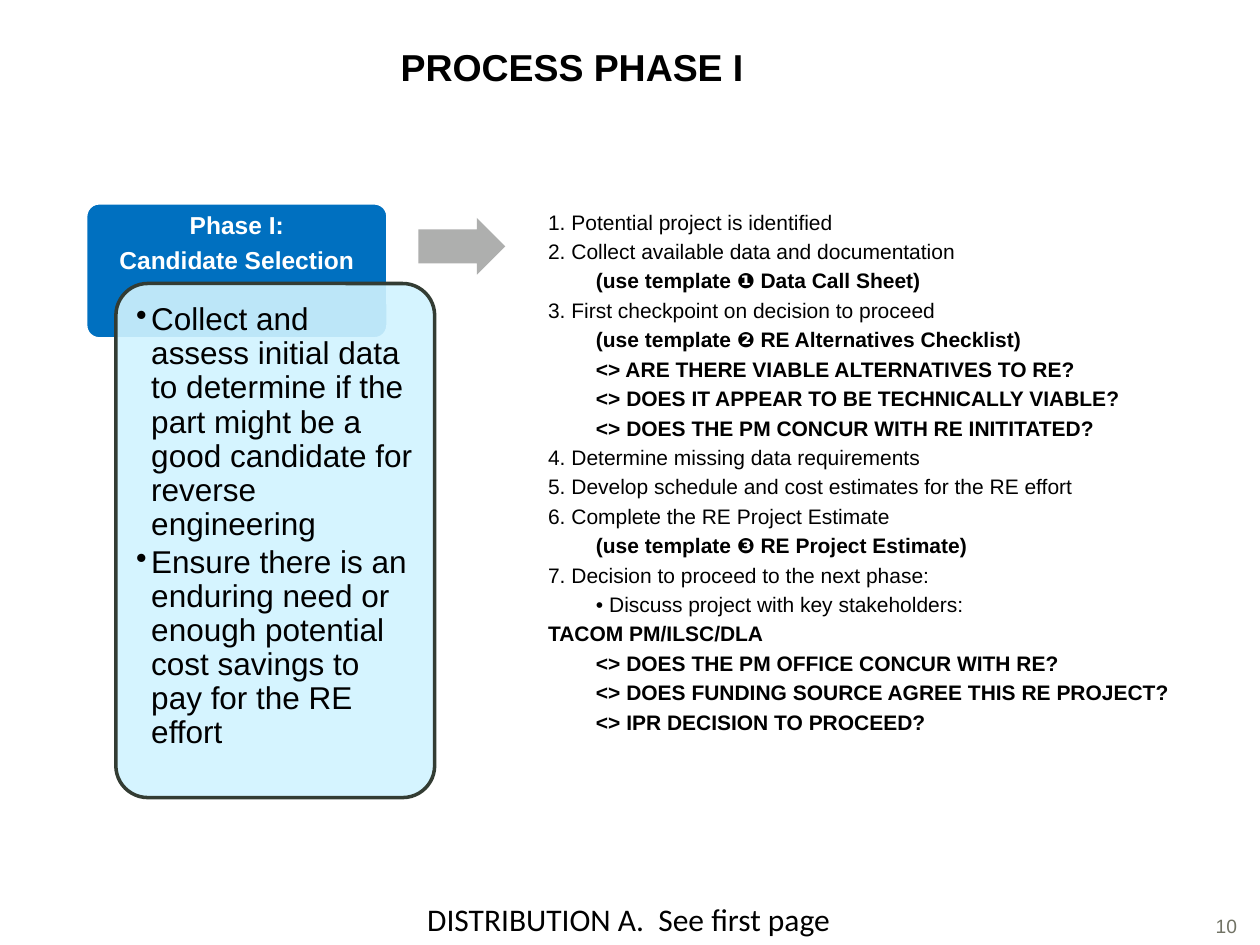
import pptx
import pptx.dml.color
import pptx.enum.shapes
import pptx.enum.text
import pptx.oxml
import pptx.oxml.ns
import pptx.util

Align = pptx.enum.text.PP_ALIGN
Anchor = pptx.enum.text.MSO_ANCHOR
Shape = pptx.enum.shapes.MSO_SHAPE
COLUMNS, ROWS = 100, 75
STEPS = [
    (0, False, "1. Potential project is identified"),
    (0, False, "2. Collect available data and documentation"),
    (1, True, "(use template ❶ Data Call Sheet)"),
    (0, False, "3. First checkpoint on decision to proceed"),
    (1, True, "(use template ❷ RE Alternatives Checklist)"),
    (1, True, "<> ARE THERE VIABLE ALTERNATIVES TO RE?"),
    (1, True, "<> DOES IT APPEAR TO BE TECHNICALLY VIABLE?"),
    (1, True, "<> DOES THE PM CONCUR WITH RE INITITATED?"),
    (0, False, "4. Determine missing data requirements"),
    (0, False, "5. Develop schedule and cost estimates for the RE effort"),
    (0, False, "6. Complete the RE Project Estimate"),
    (1, True, "(use template ❸ RE Project Estimate)"),
    (0, False, "7. Decision to proceed to the next phase:"),
    (1, False, "• Discuss project with key stakeholders:"),
    (0, True, "TACOM PM/ILSC/DLA"),
    (1, True, "<> DOES THE PM OFFICE CONCUR WITH RE?"),
    (1, True, "<> DOES FUNDING SOURCE AGREE THIS RE PROJECT?"),
    (1, True, "<> IPR DECISION TO PROCEED?"),
]
GOALS = [
    "Collect and assess initial data to determine if the part might be a good "
    "candidate for reverse engineering",
    "Ensure there is an enduring need or enough potential cost savings to pay "
    "for the RE effort",
]


def color(value):
    return pptx.dml.color.RGBColor.from_string(value)


class SlideBuilder:
    """Hold the text style and the current slide, and add elements on a grid."""

    def __init__(self, deck, font="Arial", ink="000000"):
        self.deck, self.font, self.ink = deck, font, ink
        self.page = deck.slides.add_slide(deck.slide_layouts[1])

    def area(self, left, top, width, height):
        column = self.deck.slide_width / COLUMNS
        row = self.deck.slide_height / ROWS
        return [round(count * unit) for count, unit in
                zip((left, top, width, height), (column, row, column, row))]

    def frame(self, box, insets=(0.1, 0.05, 0.1, 0.05), anchor=Anchor.TOP):
        frame = box.text_frame
        frame.word_wrap = True
        frame.auto_size = pptx.enum.text.MSO_AUTO_SIZE.NONE
        frame.vertical_anchor = anchor
        sides = ("margin_left", "margin_top", "margin_right", "margin_bottom")
        for side, inset in zip(sides, insets):
            setattr(frame, side, pptx.util.Inches(inset))
        return frame

    def paragraph(self, frame, text, size, bold=False, ink=None, font=None,
                  align=Align.LEFT, before=0, after=0, spacing=1,
                  margin=0, hanging=0, bullet=None):
        first = not frame.paragraphs[0].runs
        para = frame.paragraphs[0] if first else frame.add_paragraph()
        para.alignment, para.line_spacing = align, spacing
        para.space_before = pptx.util.Pt(0 if first else before)
        para.space_after = pptx.util.Pt(after)
        properties = para._p.get_or_add_pPr()
        properties.set("marL", str(pptx.util.Inches(margin)))
        properties.set("indent", str(-pptx.util.Inches(hanging)))
        tag = "a:buChar" if bullet else "a:buNone"
        mark = pptx.oxml.parse_xml(f"<{tag} {pptx.oxml.ns.nsdecls('a')}/>")
        if bullet:
            mark.set("char", bullet)
        properties.append(mark)
        span = para.add_run()
        span.text = text
        span.font.name = font or self.font
        span.font.size = pptx.util.Pt(size)
        span.font.bold = bold
        span.font.color.rgb = color(ink or self.ink)

    def placeholder(self, index, *place):
        box = self.page.placeholders[index]
        box.left, box.top, box.width, box.height = self.area(*place)
        return self.frame(box)

    def text_box(self, *place, **style):
        return self.frame(self.page.shapes.add_textbox(*self.area(*place)), **style)

    def shape(self, kind, *place, fill, adjustments, line=None, opacity=None):
        shape = self.page.shapes.add_shape(kind, *self.area(*place))
        shape.shadow.inherit = False
        for index, value in enumerate(adjustments):
            shape.adjustments[index] = value
        shape.fill.solid()
        shape.fill.fore_color.rgb = color(fill)
        if opacity:
            alpha = pptx.oxml.parse_xml(
                f"<a:alpha {pptx.oxml.ns.nsdecls('a')} val='{opacity * 1000}'/>")
            shape._element.spPr.find(".//" + pptx.oxml.ns.qn("a:srgbClr")).append(alpha)
        if line:
            shape.line.color.rgb = color(line)
            shape.line.width = pptx.util.Pt(2)
        else:
            shape.line.fill.background()


def main():
    deck = pptx.Presentation()
    deck.slide_width = pptx.util.Inches(10)
    deck.slide_height = pptx.util.Inches(7.5)
    slide = SlideBuilder(deck)

    number = slide.text_box(95.5, 72.1, 4.5, 2.9)
    slide.paragraph(number, "10", 11, ink="717365")
    footer = slide.text_box(6.9, 69.8, 86, 5.1, anchor=Anchor.BOTTOM)
    slide.paragraph(footer, "DISTRIBUTION A.  See first page", 18,
                    font="Calibri", align=Align.CENTER)

    title = slide.placeholder(0, 30.8, 3, 60.9, 8.8)
    slide.paragraph(title, "PROCESS PHASE I", 21.4, bold=True)
    steps = slide.placeholder(1, 42.5, 16.1, 51.6, 49.7)
    for level, bold, text in STEPS:
        slide.paragraph(steps, text, 12, bold=bold, before=2.4, margin=0.38,
                        hanging=0 if level else 0.38)

    slide.shape(Shape.ROUNDED_RECTANGLE, 6.8, 16.1, 24, 10.8,
                fill="0070C0", line="FFFFFF", adjustments=[0.1])
    phase = slide.text_box(6.8, 16.1, 24, 7.2, insets=(0.08, 0.08, 0.08, 0.04))
    for text in ("Phase I:", "Candidate Selection"):
        slide.paragraph(phase, text, 14, bold=True, ink="FFFFFF",
                        align=Align.CENTER, spacing=0.9, after=4.9)

    slide.shape(Shape.ROUNDED_RECTANGLE, 9.2, 22.5, 25.3, 40.8, fill="D1F3FF",
                line="333C33", adjustments=[0.1], opacity=90)
    goals = slide.text_box(9.9, 23.2, 23.8, 39.5, insets=(0.09,) * 4)
    for text in GOALS:
        slide.paragraph(goals, text, 18, spacing=0.9, after=2.7,
                        margin=0.12, hanging=0.12, bullet="•")

    slide.shape(Shape.RIGHT_ARROW, 33.2, 17.3, 6.9, 4.5, fill="AEAFAE",
                adjustments=[0.6, 0.5])
    deck.save("out.pptx")


if __name__ == "__main__":
    main()
